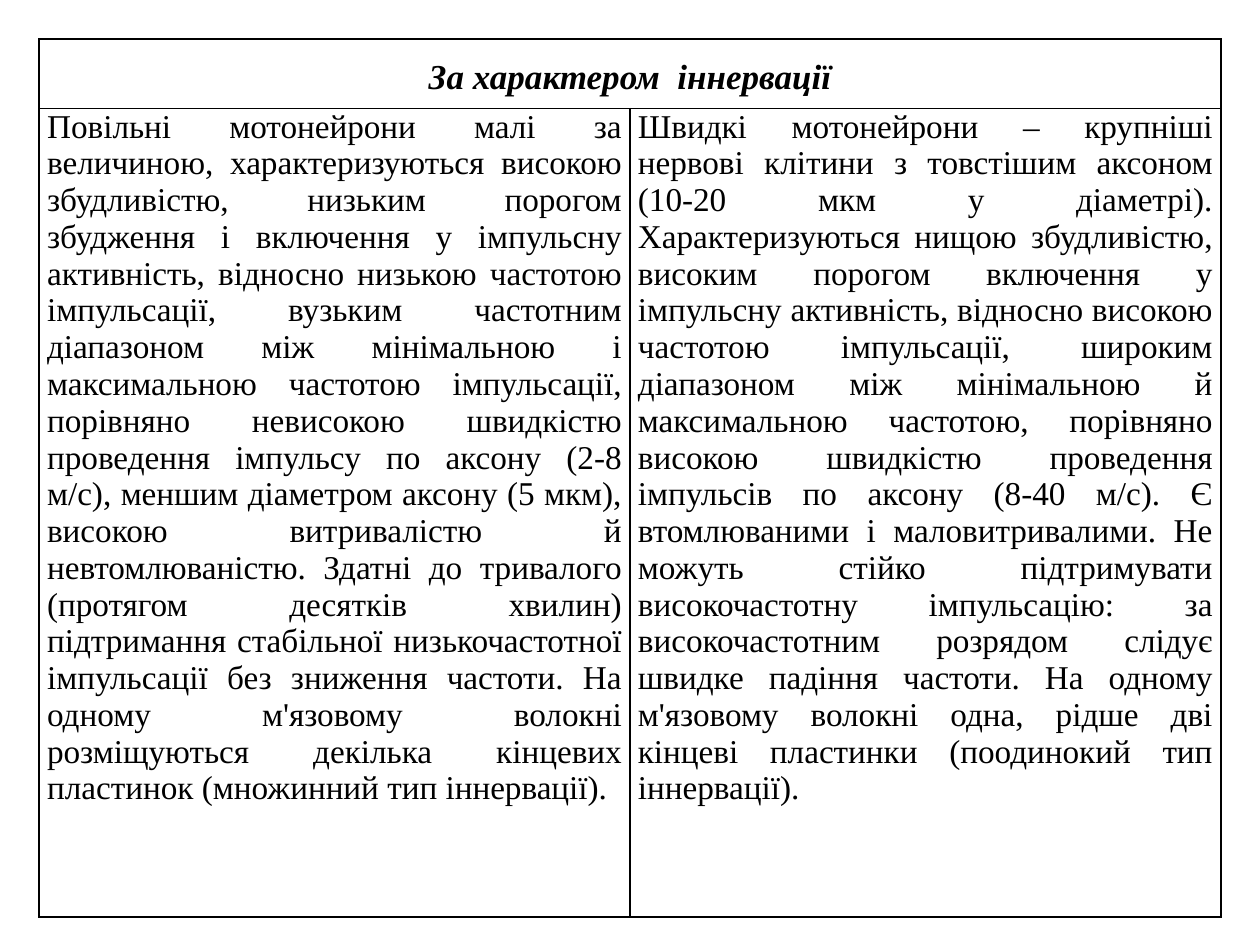
from dataclasses import dataclass

from lxml import etree
from pptx import Presentation
from pptx.dml.color import RGBColor
from pptx.enum.text import PP_ALIGN
from pptx.oxml.ns import qn
from pptx.util import Cm, Pt

CENTER = PP_ALIGN.CENTER
JUSTIFY = PP_ALIGN.JUSTIFY
FONT = "Times New Roman"
BLACK = "000000"
BORDER_WIDTH = Pt(1)
BORDER_TAGS = ("a:lnL", "a:lnR", "a:lnT", "a:lnB")
MARGIN = Cm(0.79)
COLUMN_WIDTH = Cm(11.91)
ROW_HEIGHTS = (Cm(1.4), Cm(16.3))


@dataclass
class CellText:
    row: int
    column: int
    text: str
    size: float
    alignment: int
    line_spacing: float = 1.0
    emphasized: bool = False


CELL_TEXTS = [
    CellText(0, 0, "За характером  іннервації", 20, CENTER, 1.5, True),
    CellText(
        1, 0,
        "Повільні мотонейрони малі за величиною, характеризуються високою "
        "збудливістю, низьким порогом збудження і включення у імпульсну "
        "активність, відносно низькою частотою імпульсації, вузьким частотним "
        "діапазоном між мінімальною і максимальною частотою імпульсації, "
        "порівняно невисокою швидкістю проведення імпульсу по аксону (2-8 м/с), "
        "меншим діаметром аксону (5 мкм), високою витривалістю й "
        "невтомлюваністю. Здатні до тривалого (протягом десятків хвилин) "
        "підтримання стабільної низькочастотної імпульсації без зниження "
        "частоти. На одному м'язовому волокні розміщуються декілька кінцевих "
        "пластинок (множинний тип іннервації).",
        19, JUSTIFY),
    CellText(
        1, 1,
        "Швидкі мотонейрони – крупніші нервові клітини з товстішим аксоном "
        "(10-20 мкм у діаметрі). Характеризуються нищою збудливістю, високим "
        "порогом включення у імпульсну активність, відносно високою частотою "
        "імпульсації, широким діапазоном між мінімальною й максимальною "
        "частотою, порівняно високою швидкістю проведення імпульсів по аксону "
        "(8-40 м/с). Є втомлюваними і маловитривалими. Не можуть стійко "
        "підтримувати високочастотну імпульсацію: за високочастотним розрядом "
        "слідує швидке падіння частоти. На одному м'язовому волокні одна, "
        "рідше дві кінцеві пластинки (поодинокий тип іннервації).",
        19, JUSTIFY),
]


def color(value: str) -> RGBColor:
    return RGBColor.from_string(value)


def format_cell(cell) -> None:
    """Clear the fill, set the margins and draw all four borders."""
    cell.margin_left = cell.margin_right = Cm(0.16)
    cell.margin_top = cell.margin_bottom = 0
    cell.fill.background()
    properties = cell._tc.get_or_add_tcPr()
    for index, tag in enumerate(BORDER_TAGS):
        line = etree.Element(qn(tag), w=str(BORDER_WIDTH))
        fill = etree.SubElement(line, qn("a:solidFill"))
        etree.SubElement(fill, qn("a:srgbClr"), val=BLACK)
        properties.insert(index, line)


def write_cell(cell, content: CellText) -> None:
    paragraph = cell.text_frame.paragraphs[0]
    paragraph.alignment = content.alignment
    paragraph.line_spacing = content.line_spacing
    run = paragraph.add_run()
    run.text = content.text
    font = run.font
    font.name = FONT
    font.size = Pt(content.size)
    font.bold = font.italic = content.emphasized
    font.color.rgb = color(BLACK)


def main() -> None:
    presentation = Presentation()
    presentation.slide_width = Cm(25.4)
    presentation.slide_height = Cm(19.05)
    slide = presentation.slides.add_slide(presentation.slide_layouts[6])

    # Comparison table: one merged heading above two columns
    table = slide.shapes.add_table(
        2, 2, MARGIN, MARGIN, 2 * COLUMN_WIDTH, sum(ROW_HEIGHTS)).table
    table.first_row = table.horz_banding = False
    for column in table.columns:
        column.width = COLUMN_WIDTH
    for row, height in zip(table.rows, ROW_HEIGHTS):
        row.height = height
    for cell in table.iter_cells():
        format_cell(cell)
    table.cell(0, 0).merge(table.cell(0, 1))

    # Heading and descriptions
    for content in CELL_TEXTS:
        write_cell(table.cell(content.row, content.column), content)

    presentation.save("out.pptx")


if __name__ == "__main__":
    main()
